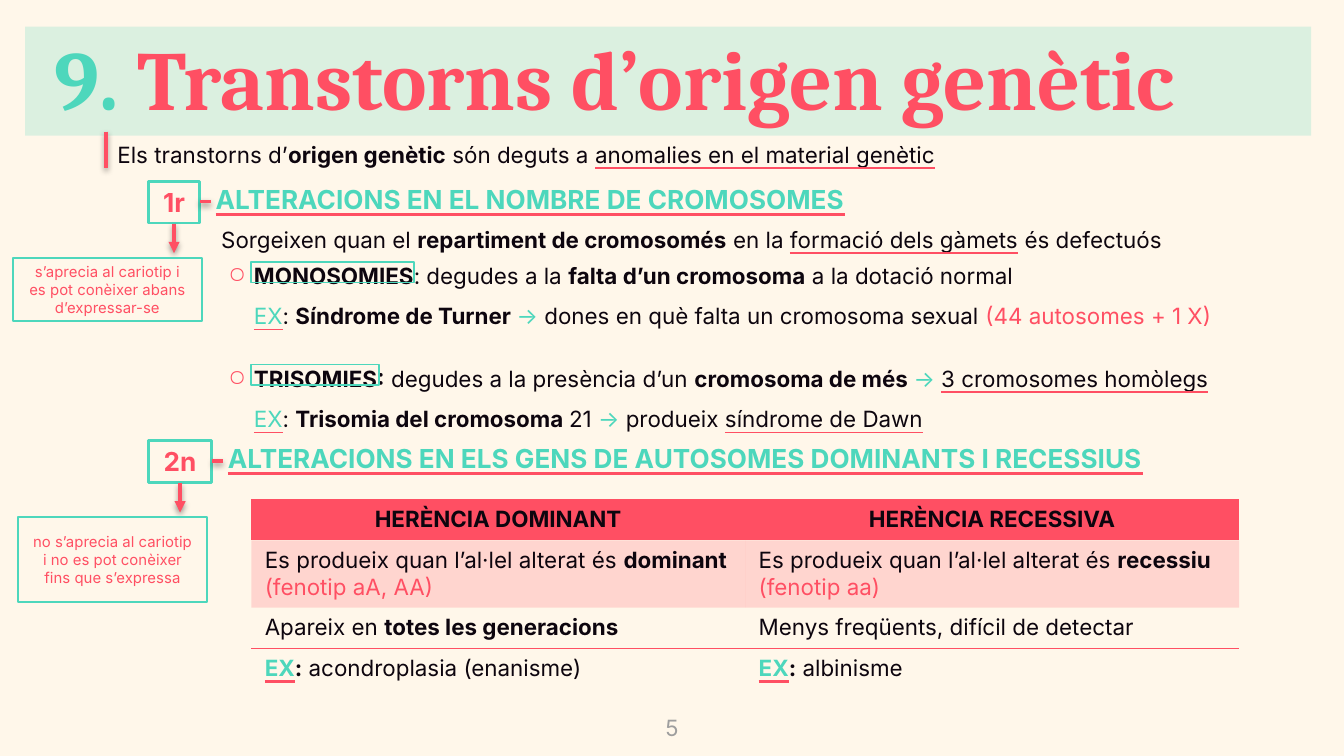
from lxml import etree
from pptx import Presentation
from pptx.dml.color import RGBColor
from pptx.enum.shapes import MSO_CONNECTOR, MSO_SHAPE
from pptx.enum.text import MSO_ANCHOR, MSO_AUTO_SIZE, PP_ALIGN
from pptx.oxml.ns import qn
from pptx.util import Inches, Pt

WIDE = Inches(10)
HIGH = WIDE * 9 // 16
RECT, LINE = MSO_SHAPE.RECTANGLE, MSO_CONNECTOR.STRAIGHT
TOP, MID = MSO_ANCHOR.TOP, MSO_ANCHOR.MIDDLE
LEFT, MIDDLE = PP_ALIGN.LEFT, PP_ALIGN.CENTER
FIXED, GROW = MSO_AUTO_SIZE.NONE, MSO_AUTO_SIZE.SHAPE_TO_FIT_TEXT
PLAIN = "{2D5ABB26-0587-4C30-8999-92F81FD0307C}"
COLORS = {"cream": "FFF7EA", "mint": "4DD7BC", "red": "FF4F63",
          "ink": "0D050E", "gray": "9E9E9E", "black": "000000"}

INTRO = [("Els transtorns d’", "ink"), ("origen genètic", "ink b"),
         (" són deguts a ", "ink"), ("anomalies en el material genètic", "ink u")]
CAUSE = [("Sorgeixen quan el ", "ink"), ("repartiment de cromosomés", "ink b"),
         (" en la ", "ink"), ("formació dels gàmets", "ink u"),
         (" és defectuós", "ink")]
TYPES = [
    [("MONOSOMIES", "ink b"), (": degudes a la ", "ink"),
     ("falta d’un cromosoma", "ink b"), (" a la dotació normal", "ink"),
     ("\n", "ink"), ("EX", "mint u"), (": ", "ink"),
     ("Síndrome de Turner ", "ink b"), ("→", "mint"),
     (" dones en què falta un cromosoma sexual ", "ink"),
     ("(44 autosomes + 1 X)", "red")],
    [("TRISOMIES:", "ink b"), (" degudes a la presència d’un ", "ink"),
     ("cromosoma de més ", "ink b"), ("→ ", "mint"),
     ("3 cromosomes homòlegs", "ink u"), ("\n", "ink"),
     ("EX", "mint u"), (": ", "ink"), ("Trisomia del cromosoma ", "ink b"),
     ("21 ", "ink"), ("→", "mint"), (" produeix ", "ink"),
     ("síndrome de Dawn", "ink u")]]
FORM = ("Es produeix quan l’al·lel alterat és ", "ink")
CASE = [("EX", "mint b u"), (":", "ink b")]
CELLS = [
    [[("HERÈNCIA DOMINANT", "ink b")], [("HERÈNCIA RECESSIVA", "ink b")]],
    [[FORM, ("dominant ", "ink b"), ("(fenotip aA, AA)", "red")],
     [FORM, ("recessiu ", "ink b"), ("(fenotip aa)", "red")]],
    [[("Apareix en ", "ink"), ("totes les generacions", "ink b")],
     [("Menys freqüents, difícil de detectar", "ink")]],
    [CASE + [(" acondroplasia (enanisme)", "ink")],
     CASE + [(" albinisme", "ink")]]]
ROWS = [5.4, 8.7, 5.4, 7.3]


def rgb(name):
    """Return a named colour."""
    return RGBColor.from_string(COLORS[name])


def across(share):
    """Turn a percentage of the slide's width into a length."""
    return round(WIDE * share / 100)


def down(share):
    """Turn a percentage of the slide's height into a length."""
    return round(HIGH * share / 100)


def place(x, y, w, h):
    """Turn percentages into left, top, width and height."""
    return across(x), down(y), across(w), down(h)


def sub(parent, tag, **attrs):
    """Append a drawing element."""
    return etree.SubElement(parent, qn("a:" + tag), **attrs)


def paint(parent, name):
    """Append a solid colour."""
    sub(sub(parent, "solidFill"), "srgbClr", val=COLORS[name])


def fade(fill, name, alpha):
    """Fill with a colour at a given opacity."""
    fill.solid()
    fill.fore_color.rgb = rgb(name)
    if alpha < 100:
        node = fill._xPr.find(qn("a:solidFill"))[0]
        sub(node, "alpha", val=str(alpha * 1000))


def write(para, runs, size=12, face="Inter", align=LEFT, space=None):
    """Write styled runs into a paragraph."""
    para.alignment = align
    if space:
        para.line_spacing = space
    for text, style in runs:
        if text == "\n":
            para.add_line_break()
            sub(para._p[-1], "rPr", sz=str(size * 100))
            continue
        name, *marks = style.split()
        run = para.add_run()
        run.text = text
        font = run.font
        font.size, font.name, font.bold = Pt(size), face, "b" in marks
        font.color.rgb = rgb(name)
        if "u" in marks:
            font.underline = True
            under = etree.Element(qn("a:uFill"))
            paint(under, "red")
            font._rPr.find(qn("a:solidFill")).addnext(under)


def trim(frame, anchor=TOP):
    """Remove a frame's insets and set its anchor."""
    frame.margin_left = frame.margin_right = 0
    frame.margin_top = frame.margin_bottom = 0
    frame.vertical_anchor, frame.word_wrap = anchor, True


def label(slide, spot, runs, anchor=TOP, **look):
    """Add a text box without insets and return its frame."""
    frame = slide.shapes.add_textbox(*place(*spot)).text_frame
    trim(frame, anchor)
    write(frame.paragraphs[0], runs, **look)
    return frame


def frame_box(slide, spot, weight=1, runs=(), size=8):
    """Add an outlined box with optional centred text."""
    box = slide.shapes.add_shape(RECT, *place(*spot))
    box.shadow.inherit = False
    box.fill.background()
    box.line.color.rgb, box.line.width = rgb("mint"), Pt(weight)
    if runs:
        box.text_frame.vertical_anchor = MID
        write(box.text_frame.paragraphs[0], runs, size, align=MIDDLE)


def rule(slide, x, y, right, low, arrow=False):
    """Add a red line with a soft shadow."""
    line = slide.shapes.add_connector(
        LINE, across(x), down(y), across(right), down(low))
    line.line.color.rgb, line.line.width = rgb("red"), Pt(2)
    if arrow:
        sub(line.line._get_or_add_ln(), "tailEnd", type="triangle")
    glow = sub(sub(line._element.spPr, "effectLst"), "outerShdw",
               blurRad=str(Pt(3.1)), dist=str(Pt(1.6)), dir="5400000",
               algn="bl", rotWithShape="0")
    sub(sub(glow, "srgbClr", val=COLORS["black"]), "alpha", val="38000")


def section(slide, y, tag, width, text, length, note, side, tall):
    """Add a numbered heading with its tag, arrow and side note."""
    x = 11.05
    edge, mid = x + width, x + width / 2
    frame_box(slide, (x, y, width, 5.52), 1.5, [(tag, "red b")], 14)
    rule(slide, edge, y + 2.67, edge + 0.85, y + 2.67)
    spot = place(edge + 0.22, y - 0.66, length, 6.05)
    frame = slide.shapes.add_textbox(*spot).text_frame
    frame.word_wrap, frame.auto_size = False, GROW
    write(frame.paragraphs[0], [(text, "mint b u")], 14)
    rule(slide, mid, y + 5.6, mid, y + 9.5, True)
    frame_box(slide, (side, y + 10.1, 14.1, tall), 1, [(note, "red")])


def kinds(slide):
    """Add the bulleted kinds of alteration and their frames."""
    frame = label(slide, (17, 32.92, 83, 24.02), TYPES[0], space=1.5)
    more = frame.add_paragraph()
    more.space_before = Pt(12)
    write(more, TYPES[1], space=1.5)
    for para in frame.paragraphs:
        props = para._p.get_or_add_pPr()
        props.set("marL", str(across(1.9)))
        props.set("indent", str(-across(1.9)))
        sub(sub(props, "buClr"), "srgbClr", val=COLORS["red"])
        sub(props, "buChar", char="○")
    for y, width in ((34.7, 12.1), (48.22, 9.5)):
        frame_box(slide, (18.7, y, width, 2.67))


def edge(cell, side):
    """Draw a red border on one side of a cell."""
    line = etree.Element(qn("a:" + side), w=str(Pt(1)))
    paint(line, "red")
    cell._tc.get_or_add_tcPr().insert(0, line)


def grid(slide):
    """Add the table that compares both kinds of inheritance."""
    spot = place(18.7, 66.07, 73.5, sum(ROWS))
    table = slide.shapes.add_table(len(CELLS), 2, *spot).table
    table.horz_banding = False
    table._tbl.tblPr.find(qn("a:tableStyleId")).text = PLAIN
    for r, (high, pair) in enumerate(zip(ROWS, CELLS)):
        table.rows[r].height = down(high)
        for c, runs in enumerate(pair):
            cell = table.cell(r, c)
            write(cell.text_frame.paragraphs[0], runs,
                  align=LEFT if r else MIDDLE)
            if r < 2:
                fade(cell.fill, "red", 20 if r else 100)
            else:
                cell.fill.background()
                edge(cell, "lnB" if r == 2 else "lnT")


def banner(slide):
    """Add the tinted band and the title."""
    band = slide.shapes.add_shape(RECT, *place(1.87, 3.52, 95.7, 14.41))
    band.shadow.inherit = False
    fade(band.fill, "mint", 20)
    band.line.fill.background()
    title = slide.shapes.title
    title.left, title.top, title.width, title.height = place(
        4.07, 4.98, 88.1, 13.52)
    trim(title.text_frame)
    title.text_frame.auto_size = FIXED
    write(title.text_frame.paragraphs[0],
          [("9. ", "mint b"), ("Transtorns d’origen genètic", "red b")],
          45, "Cambria", space=0.9)
    band._element.addnext(title._element)


def main():
    """Build and save the slide."""
    deck = Presentation()
    deck.slide_width, deck.slide_height = WIDE, HIGH
    slide = deck.slides.add_slide(deck.slide_layouts[5])
    slide.background.fill.solid()
    slide.background.fill.fore_color.rgb = rgb("cream")
    banner(slide)
    label(slide, (47, 92.35, 6, 7.65), [("5", "gray")], MID, align=MIDDLE)
    label(slide, (8.74, 16.9, 81.4, 6.58), INTRO, space=1.5)
    rule(slide, 7.9, 17.4, 7.9, 22.2)
    section(slide, 23.98, "1r", 3.8, "ALTERACIONS EN EL NOMBRE DE CROMOSOMES",
            49.4, "s’aprecia al cariotip i es pot conèixer abans "
            "d’expressar-se", 0.95, 8.36)
    label(slide, (16.46, 28.11, 81.4, 6.58), CAUSE, space=1.5)
    kinds(slide)
    section(slide, 58.28, "2n", 4.7,
            "ALTERACIONS EN ELS GENS DE AUTOSOMES DOMINANTS I RECESSIUS",
            70.8, "no s’aprecia al cariotip i no es pot conèixer fins que "
            "s’expressa", 1.33, 11.21)
    grid(slide)
    deck.save("out.pptx")


if __name__ == "__main__":
    main()
